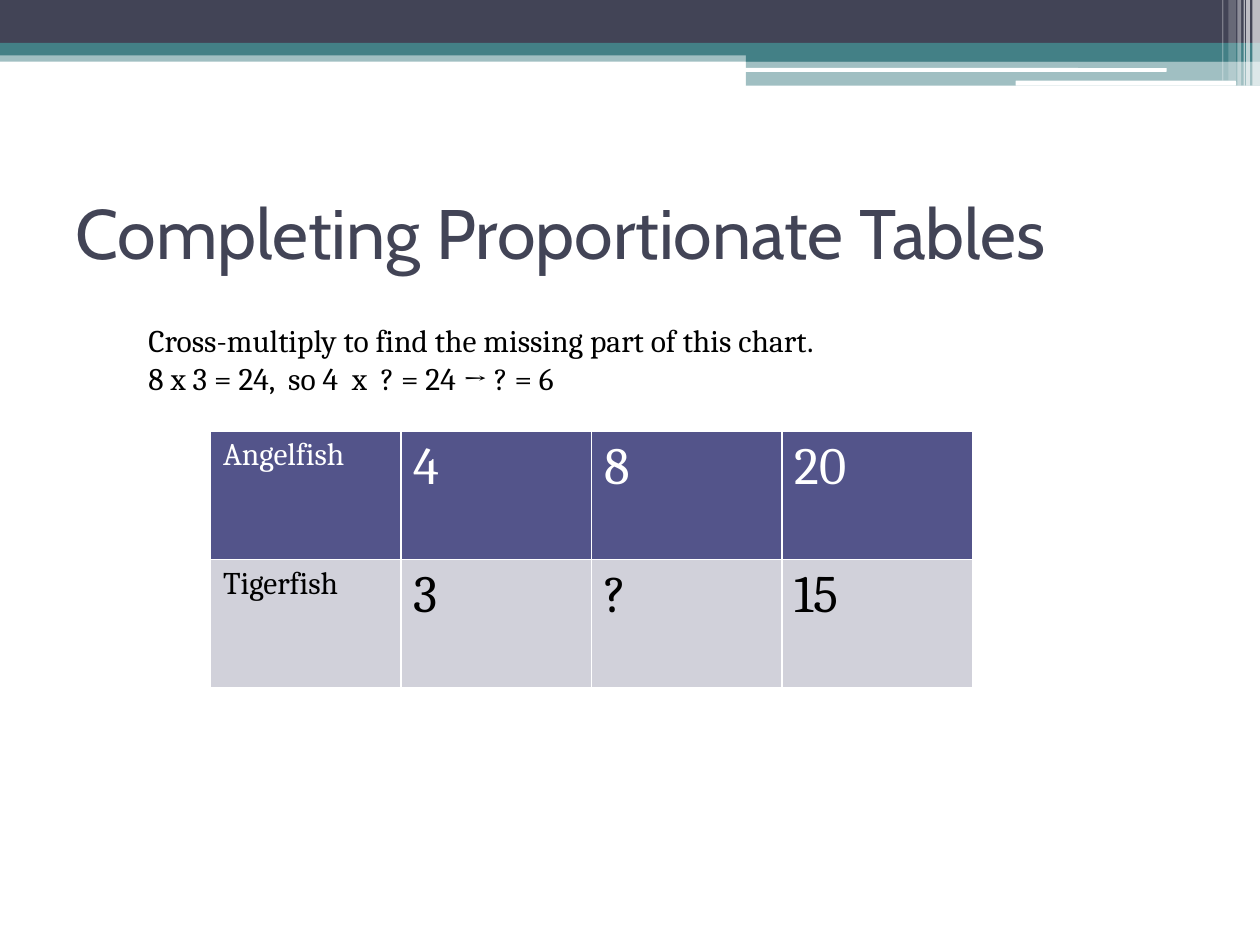
from lxml.etree import SubElement
from pptx import Presentation
from pptx.dml.color import RGBColor
from pptx.enum.shapes import MSO_SHAPE
from pptx.enum.text import MSO_ANCHOR, MSO_AUTO_SIZE, PP_ALIGN
from pptx.oxml import parse_xml
from pptx.oxml.ns import nsdecls, qn
from pptx.util import Inches, Pt

COLORS = {
    "slate": "424456",
    "teal": "438086",
    "white": "FFFFFF",
    "black": "000000",
    "header": "53548A",
    "body": "D1D1DA",
}


def add_band(left, top, width, height, color, opacity=100, kind=MSO_SHAPE.RECTANGLE):
    shape = slide.shapes.add_shape(
        kind, Inches(left), Inches(top), Inches(width), Inches(height)
    )
    shape.shadow.inherit = False
    shape.line.fill.background()
    shape.fill.solid()
    shape.fill.fore_color.rgb = RGBColor.from_string(COLORS[color])
    if opacity < 100:
        color_element = shape.fill._xPr.find(".//" + qn("a:srgbClr"))
        SubElement(color_element, qn("a:alpha"), val=str(opacity * 1000))


def format_text(paragraph, size, color, font_name="Cambria"):
    for run in paragraph.runs:
        run.font.name = font_name
        run.font.size = Pt(size)
        run.font.color.rgb = RGBColor.from_string(COLORS[color])


presentation = Presentation()
presentation.slide_width = Inches(10)
presentation.slide_height = Inches(7.5)
slide = presentation.slides.add_slide(presentation.slide_layouts[5])

# Header bands
add_band(0, 0.4, 10, 0.09, "teal", 50)
add_band(0, 0, 10, 0.34, "slate")
add_band(0, 0.34, 10, 0.1, "teal")
add_band(5.92, 0.39, 4.08, 0.1, "teal")
add_band(5.92, 0.48, 4.08, 0.2, "teal", 50)
add_band(5.91, 0.54, 3.35, 0.03, "white", kind=MSO_SHAPE.ROUNDED_RECTANGLE)
add_band(8.06, 0.64, 1.75, 0.04, "white", kind=MSO_SHAPE.ROUNDED_RECTANGLE)

# Translucent stripes at the right edge
for left, width, height, opacity in [
    (9.94, 0.06, 0.68, 65),
    (9.89, 0.03, 0.68, 65),
    (9.87, 0.01, 0.68, 60),
    (9.82, 0.03, 0.68, 40),
    (9.75, 0.06, 0.64, 20),
    (9.7, 0.01, 0.64, 30),
]:
    add_band(left, 0, width, height, "white", opacity)

title = slide.shapes.title
title.left, title.top = Inches(0.5), Inches(1.25)
title.width, title.height = Inches(9), Inches(1.17)
title.text_frame.text = "Completing Proportionate Tables"
title.text_frame.auto_size = MSO_AUTO_SIZE.NONE
title.text_frame.vertical_anchor = MSO_ANCHOR.MIDDLE
title.text_frame.paragraphs[0].alignment = PP_ALIGN.LEFT
format_text(title.text_frame.paragraphs[0], 40, "slate", "Cabin")

# Fish table
rows = [
    ("header", "white", ["Angelfish", "4", "8", "20"]),
    ("body", "black", ["Tigerfish", "3", "?", "15"]),
]
table = slide.shapes.add_table(
    2, 4, Inches(1.67), Inches(3.42), Inches(6.05), Inches(2.04)
).table
for row_index, (fill, text_color, values) in enumerate(rows):
    for column_index, value in enumerate(values):
        cell = table.cell(row_index, column_index)
        cell.text_frame.text = value
        size = 18 if column_index == 0 else 30
        format_text(cell.text_frame.paragraphs[0], size, text_color)
        cell.fill.solid()
        cell.fill.fore_color.rgb = RGBColor.from_string(COLORS[fill])
        properties = cell._tc.get_or_add_tcPr()
        for position, side in enumerate(["lnL", "lnR", "lnT", "lnB"]):
            border = parse_xml(
                f'<a:{side} {nsdecls("a")} w="{Pt(1)}"><a:solidFill>'
                f'<a:srgbClr val="{COLORS["white"]}"/></a:solidFill></a:{side}>'
            )
            properties.insert(position, border)

explanation = slide.shapes.add_textbox(
    Inches(1.08), Inches(2.5), Inches(6.67), Inches(0.71)
)
explanation.text_frame.word_wrap = True
explanation.text_frame.auto_size = MSO_AUTO_SIZE.SHAPE_TO_FIT_TEXT
explanation.text_frame.text = (
    "Cross-multiply to find the missing part of this chart.\n"
    "8 x 3 = 24,  so 4  x  ? = 24 → ? = 6"
)
for paragraph in explanation.text_frame.paragraphs:
    format_text(paragraph, 18, "black")

presentation.save("out.pptx")
